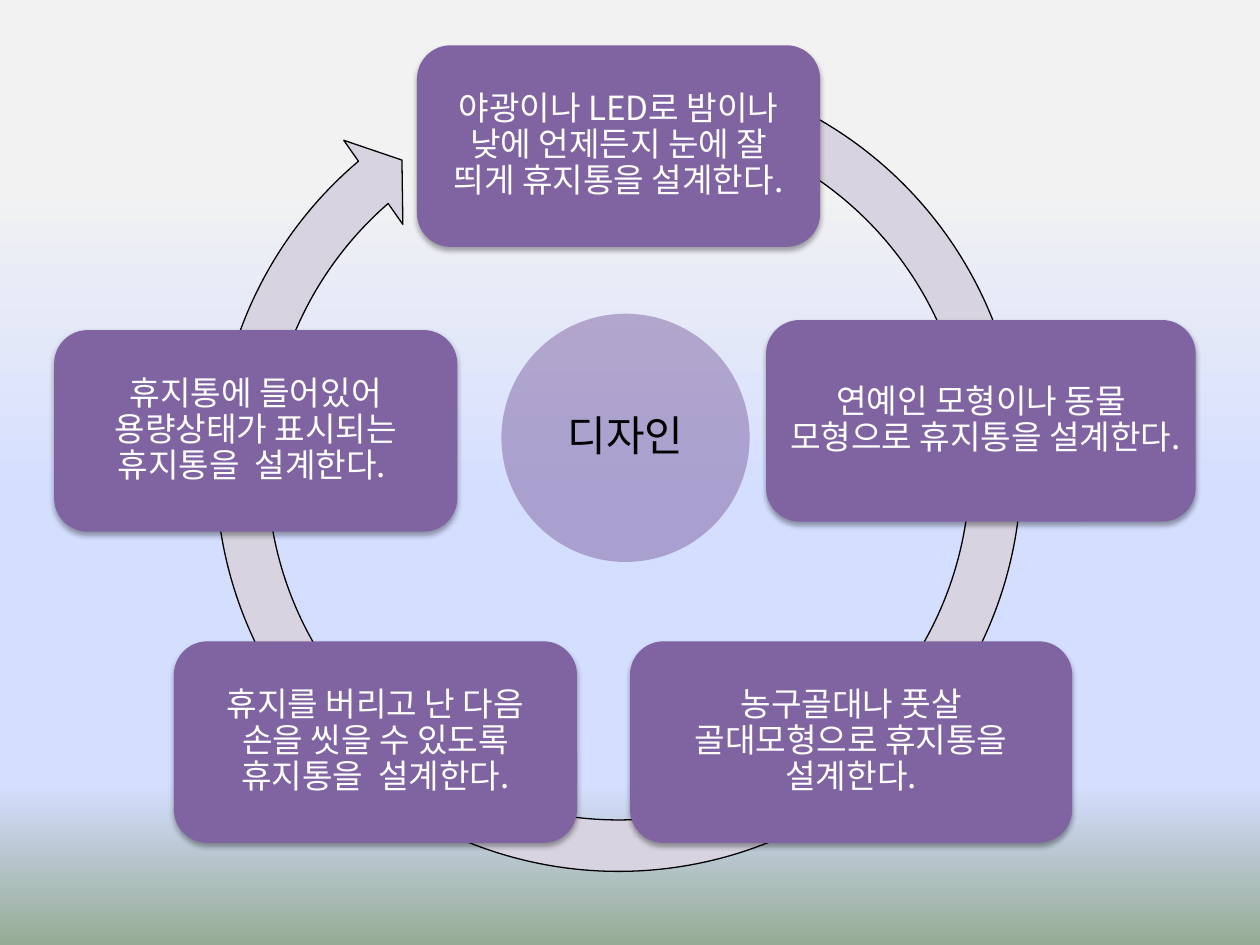
from lxml import etree
from pptx import Presentation
from pptx.dml.color import RGBColor
from pptx.enum.shapes import MSO_SHAPE
from pptx.enum.text import MSO_ANCHOR, PP_ALIGN
from pptx.oxml.ns import qn
from pptx.util import Inches, Pt

ROUNDED, OVAL, CIRCULAR_ARROW = (
    MSO_SHAPE.ROUNDED_RECTANGLE, MSO_SHAPE.OVAL, MSO_SHAPE.CIRCULAR_ARROW)
MIDDLE = MSO_ANCHOR.MIDDLE
CENTER = PP_ALIGN.CENTER

CARD_HEIGHT = 1.6
CARDS = [  # left, top, width, text
    (3.31, 0.36, 3.2, "야광이나 LED로 밤이나 낮에 언제든지 눈에 잘 띄게 휴지통을 설계한다."),
    (6.08, 2.54, 3.41, "연예인 모형이나 동물 모형으로 휴지통을 설계한다."),
    (5, 5.09, 3.51, "농구골대나 풋살 골대모형으로 휴지통을 설계한다."),
    (1.38, 5.09, 3.2, "휴지를 버리고 난 다음 손을 씻을 수 있도록 휴지통을  설계한다."),
    (0.43, 2.62, 3.2, "휴지통에 들어있어 용량상태가 표시되는 휴지통을  설계한다. "),
]


def color(hex_value):
    return RGBColor.from_string(hex_value)


def add_xml(parent, tag, **attributes):
    return etree.SubElement(
        parent, qn(tag), {key: str(value) for key, value in attributes.items()})


class CycleSlide:
    font = "Noto Sans CJK KR"
    purple = "8064A2"

    def __init__(self, slide):
        self.slide = slide

    def background(self, stops):
        """Fill the slide with a top-to-bottom gradient of (percent, colour) stops."""
        fill = self.slide.background.fill
        fill.gradient()
        fill.gradient_angle = 270
        stop_list = next(self.slide.element.iter(qn("a:gsLst")))
        for old_stop in list(stop_list):
            stop_list.remove(old_stop)
        for percent, hex_value in stops:
            stop = add_xml(stop_list, "a:gs", pos=percent * 1000)
            add_xml(stop, "a:srgbClr", val=hex_value)

    def shape(self, kind, left, top, width, height, fill):
        shape = self.slide.shapes.add_shape(
            kind, Inches(left), Inches(top), Inches(width), Inches(height))
        shape.shadow.inherit = False
        shape.fill.solid()
        shape.fill.fore_color.rgb = color(fill)
        shape.line.fill.background()
        return shape

    def label(self, shape, text, size, text_color, inset):
        frame = shape.text_frame
        frame.word_wrap = True
        frame.vertical_anchor = MIDDLE
        frame.margin_left = frame.margin_right = Inches(inset)
        frame.margin_top = frame.margin_bottom = Inches(inset)
        paragraph = frame.paragraphs[0]
        paragraph.text = text
        paragraph.alignment = CENTER
        paragraph.line_spacing = 0.9
        paragraph.font.size = Pt(size)
        paragraph.font.name = self.font
        paragraph.font.color.rgb = color(text_color)
        default_font = next(shape.element.iter(qn("a:defRPr")))
        add_xml(default_font, "a:ea", typeface=self.font)

    def hub(self, left, top, diameter, text):
        circle = self.shape(OVAL, left, top, diameter, diameter, self.purple)
        fill_color = next(circle.element.spPr.iter(qn("a:srgbClr")))
        add_xml(fill_color, "a:alpha", val=50000)
        self.label(circle, text, 24, "000000", 0)

    def cycle_arrow(self, left, top, diameter, adjustments):
        arrow = self.shape(CIRCULAR_ARROW, left, top, diameter, diameter, "D8D3E0")
        arrow.line.color.rgb = color("000000")
        arrow.line.width = Pt(0.75)
        for index, value in enumerate(adjustments):
            arrow.adjustments[index] = value

    def card(self, left, top, width, text):
        card = self.shape(ROUNDED, left, top, width, CARD_HEIGHT, self.purple)
        effects = card.element.spPr.find(qn("a:effectLst"))
        shadow = add_xml(effects, "a:outerShdw", blurRad=int(Pt(3.1)),
                         dist=int(Pt(1.8)), dir=5400000, rotWithShape=0)
        shadow_color = add_xml(shadow, "a:srgbClr", val="000000")
        add_xml(shadow_color, "a:alpha", val=35000)
        self.label(card, text, 19, "FFFFFF", 0.08)


def main():
    presentation = Presentation()
    presentation.slide_width = Inches(10)
    presentation.slide_height = Inches(7.5)
    blank = presentation.slide_layouts[6]
    design = CycleSlide(presentation.slides.add_slide(blank))

    design.background([(19, "F2F2F2"), (53, "D4DEFF"), (83, "D4DEFF"), (100, "96AB94")])
    design.hub(3.98, 2.49, 1.97, "디자인")
    design.cycle_arrow(1.51, 0.32, 6.8, [0.06, 3.31, 137.65, 173.93, 0.06])
    for card in CARDS:
        design.card(*card)

    presentation.save("out.pptx")


if __name__ == "__main__":
    main()
